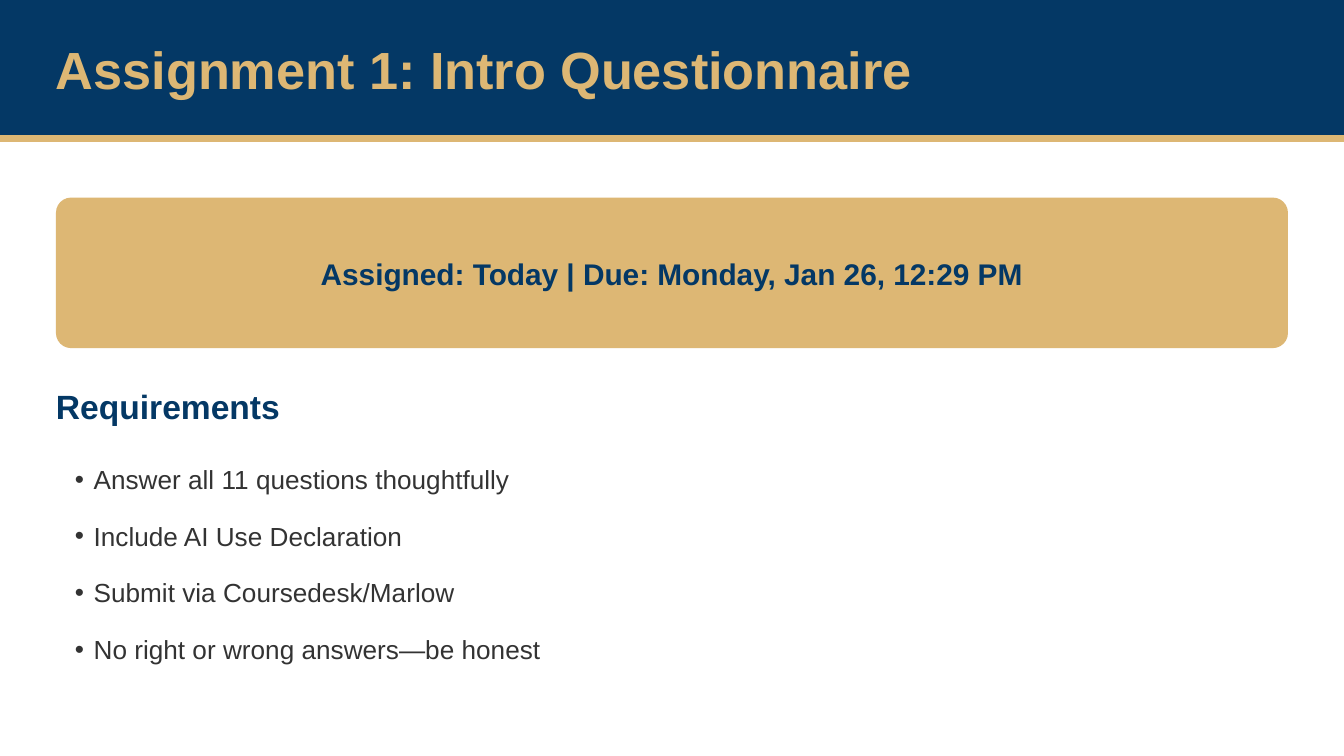
from lxml import etree
from pptx import Presentation, util as u
from pptx.dml.color import RGBColor
from pptx.enum import shapes, text
from pptx.oxml.ns import qn

# Content
TITLE = "Assignment 1: Intro Questionnaire"
DATES = "Assigned: Today | Due: Monday, Jan 26, 12:29 PM"
HEADING = "Requirements"
REQUIREMENTS = [
    "Answer all 11 questions thoughtfully",
    "Include AI Use Declaration",
    "Submit via Coursedesk/Marlow",
    "No right or wrong answers—be honest",
]

THEME = {
    "font": "Arial",
    "navy": RGBColor.from_string("043865"),
    "gold": RGBColor.from_string("DDB774"),
    "ink": RGBColor.from_string("333333"),
    "title": 28, "heading": 18, "dates": 16, "body": 14,
}

# Layout in inches, on a 16:9 slide
W = 10
H = W * 9 / 16
MARGIN = W / 24
INNER = W - 2 * MARGIN
TEXT_W = 9.35
HEADER_H, RULE_Y, RULE_PT = 1.05, 1.03, 3.75
CARD_Y, CARD_H, CARD_PAD = 1.47, 1.12, 0.12
DATES_H = 0.26
INDENT = 0.14

prs = Presentation()
prs.slide_width, prs.slide_height = u.Inches(W), u.Inches(H)
s = prs.slides.add_slide(prs.slide_layouts[6])


def inches(*values):
    return [u.Inches(v) for v in values]


def add_block(kind, box, color):
    sp = s.shapes.add_shape(kind, *inches(*box))
    sp.shadow.inherit = False
    sp.fill.solid()
    sp.fill.fore_color.rgb = color
    sp.line.fill.background()
    return sp


def add_bullet(p):
    pPr = p._p.get_or_add_pPr()
    pPr.set("marL", str(u.Inches(INDENT)))
    pPr.set("indent", str(-u.Inches(INDENT)))
    etree.SubElement(pPr, qn("a:buSzPct")).set("val", "100000")
    etree.SubElement(pPr, qn("a:buFont")).set("typeface", THEME["font"])
    etree.SubElement(pPr, qn("a:buChar")).set("char", "•")


def add_text(box, lines, size, color, bold=True, align=None, left=0, bullets=False):
    tf = s.shapes.add_textbox(*inches(*box)).text_frame
    tf.word_wrap = True
    tf.margin_left = u.Inches(left)
    tf.margin_top = tf.margin_right = tf.margin_bottom = 0
    for i, line in enumerate(lines):
        p = tf.add_paragraph() if i else tf.paragraphs[0]
        p.alignment = align
        if bullets:
            p.line_spacing, p.space_after = u.Pt(22.4), u.Pt(8)
            add_bullet(p)
        r = p.add_run()
        r.text = line
        r.font.name, r.font.size = THEME["font"], u.Pt(THEME[size])
        r.font.bold, r.font.color.rgb = bold, THEME[color]


# Header band with gold rule
add_block(shapes.MSO_SHAPE.RECTANGLE, (0, 0, W, HEADER_H), THEME["navy"])
rule = s.shapes.add_connector(shapes.MSO_CONNECTOR.STRAIGHT, *inches(0, RULE_Y, W, RULE_Y))
rule.line.color.rgb = THEME["gold"]
rule.line.width = u.Pt(RULE_PT)
etree.SubElement(rule._element.spPr, qn("a:effectLst"))
add_text((MARGIN, 0.28, TEXT_W, 0.45), [TITLE], "title", "gold")

# Dates card
card = add_block(shapes.MSO_SHAPE.ROUNDED_RECTANGLE, (MARGIN, CARD_Y, INNER, CARD_H), THEME["gold"])
card.adjustments[0] = 0.1
add_text((MARGIN + CARD_PAD, CARD_Y + (CARD_H - DATES_H) / 2, INNER - 2 * CARD_PAD, DATES_H),
         [DATES], "dates", "navy", align=text.PP_ALIGN.CENTER)

# Requirements
add_text((MARGIN, 2.87, TEXT_W, 0.29), [HEADING], "heading", "navy")
add_text((MARGIN, 3.37, INNER, 1.58), REQUIREMENTS, "body", "ink",
         bold=False, left=INDENT, bullets=True)

prs.save("out.pptx")
